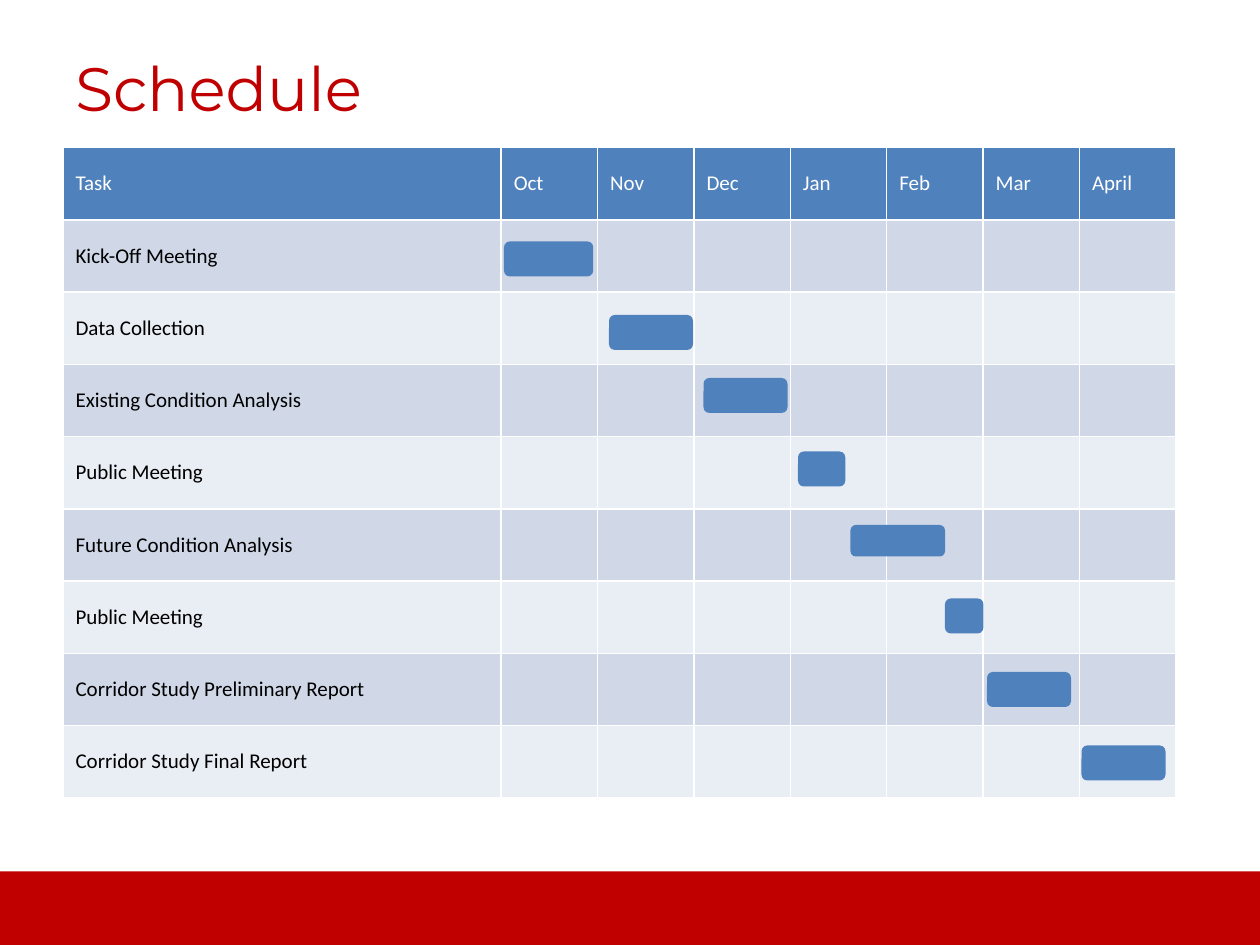
from lxml.etree import SubElement
from pptx import Presentation
from pptx.dml.color import RGBColor
from pptx.enum.shapes import MSO_SHAPE as SHAPE
from pptx.enum.text import MSO_ANCHOR as ANCHOR
from pptx.oxml.ns import qn
from pptx.util import Pt

RED, BLUE, WHITE, BLACK = "C00000", "4F81BD", "FFFFFF", "000000"
BANDS = ("D0D8E8", "E9EDF4")
HEADER = ["Task", "Oct", "Nov", "Dec", "Jan", "Feb", "Mar", "April"]
TASKS = [
    ("Kick-Off Meeting", (288, 138, 51, 20)),
    ("Data Collection", (348, 180, 48, 20)),
    ("Existing Condition Analysis", (402, 216, 48, 20)),
    ("Public Meeting", (456, 258, 27, 20)),
    ("Future Condition Analysis", (486, 300, 54, 18)),
    ("Public Meeting", (540, 342, 22, 20)),
    ("Corridor Study Preliminary Report", (564, 384, 48, 20)),
    ("Corridor Study Final Report", (618, 426, 48, 20)),
]
LEFT, TOP, TASK_W, MONTH_W, ROW_H = 36, 84.4, 250.4, 55.1, 41.3


def rgb(color):
    return RGBColor.from_string(color)


def add_run(tf, text, size, font, color):
    r = tf.paragraphs[0].add_run()
    r.text = text
    r.font.size = Pt(size)
    r.font.name = font
    r.font.color.rgb = rgb(color)


def add_block(s, kind, box, color):
    sp = s.shapes.add_shape(kind, *map(Pt, box))
    sp.shadow.inherit = False
    sp.fill.solid()
    sp.fill.fore_color.rgb = rgb(color)
    sp.line.fill.background()


def set_borders(cell, color):
    tcPr = cell._tc.get_or_add_tcPr()
    for side in ("a:lnL", "a:lnR", "a:lnT", "a:lnB"):
        ln = SubElement(tcPr, qn(side), w=str(Pt(1)))
        fill = SubElement(ln, qn("a:solidFill"))
        SubElement(fill, qn("a:srgbClr"), val=color)


def add_schedule(s):
    rows = [HEADER] + [[name] + [""] * (len(HEADER) - 1) for name, _ in TASKS]
    widths = [TASK_W] + [MONTH_W] * (len(HEADER) - 1)
    table = s.shapes.add_table(
        len(rows), len(widths), Pt(LEFT), Pt(TOP),
        Pt(sum(widths)), Pt(ROW_H * len(rows))).table
    for col, width in zip(table.columns, widths):
        col.width = Pt(width)
    for i, texts in enumerate(rows):
        table.rows[i].height = Pt(ROW_H)
        fill = BANDS[(i - 1) % 2] if i else BLUE
        for j, text in enumerate(texts):
            cell = table.cell(i, j)
            cell.vertical_anchor = ANCHOR.MIDDLE
            set_borders(cell, WHITE)
            cell.fill.solid()
            cell.fill.fore_color.rgb = rgb(fill)
            if text:
                add_run(cell.text_frame, text, 12, "Calibri", BLACK if i else WHITE)
                cell.text_frame.paragraphs[0].runs[0].font.bold = False


def main():
    prs = Presentation()
    prs.slide_width, prs.slide_height = Pt(720), Pt(540)
    s = prs.slides.add_slide(prs.slide_layouts[6])
    add_block(s, SHAPE.RECTANGLE, (0, 498, 720, 42), RED)
    tf = s.shapes.add_textbox(Pt(36), Pt(21.6), Pt(648), Pt(56.2)).text_frame
    tf.word_wrap = True
    tf.vertical_anchor = ANCHOR.MIDDLE
    add_run(tf, "Schedule", 35, "Montserrat", RED)
    add_schedule(s)
    for _, bar in TASKS:
        add_block(s, SHAPE.ROUNDED_RECTANGLE, bar, BLUE)
    prs.save("out.pptx")


if __name__ == "__main__":
    main()
